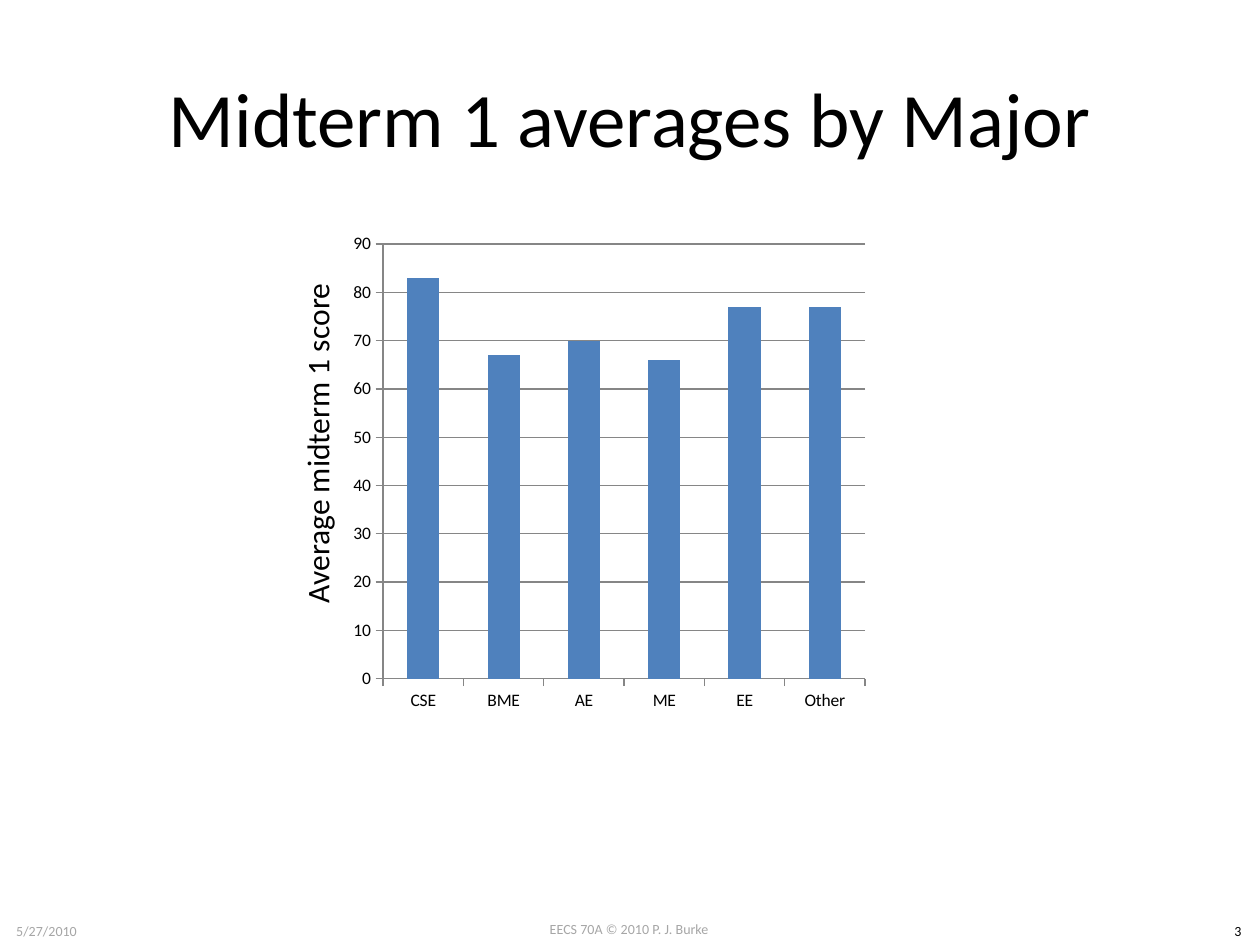
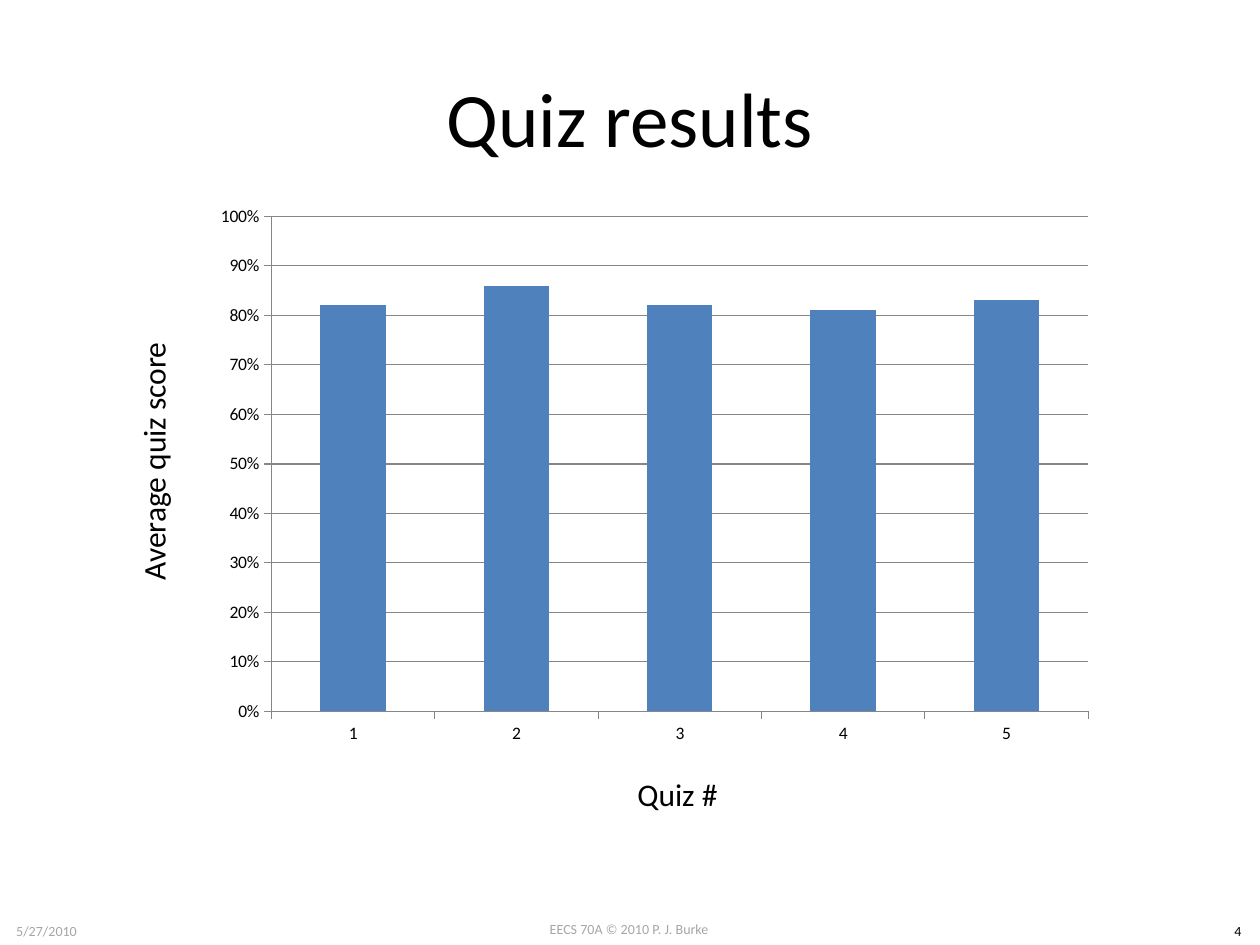
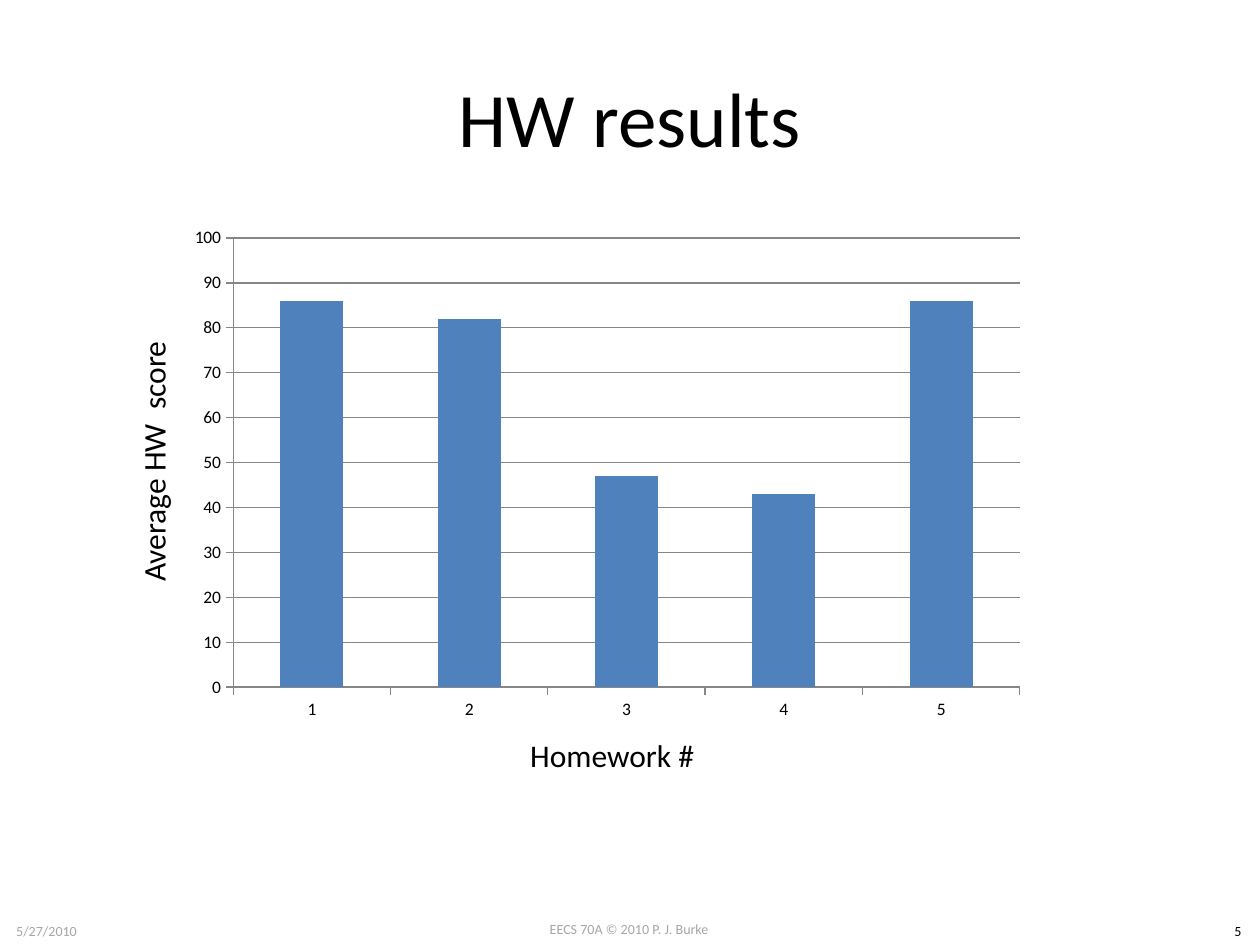
from pptx import Presentation
from pptx.chart.data import CategoryChartData
from pptx.dml.color import RGBColor
from pptx.enum.chart import XL_CHART_TYPE, XL_TICK_MARK
from pptx.enum.text import MSO_ANCHOR, MSO_AUTO_SIZE, PP_ALIGN
from pptx.util import Inches, Pt

FONT = "Calibri"
BLACK = RGBColor(0x00, 0x00, 0x00)
FOOTER_GRAY = RGBColor(0xA6, 0xA6, 0xA6)
AXIS_GRAY = RGBColor(0x86, 0x86, 0x86)
BAR_BLUE = RGBColor(0x4F, 0x81, 0xBD)

TITLE_ONLY = 5
FIRST_NUMBER = 3
LABEL_HEIGHT = 0.4
FOOTER_HEIGHT = 0.24


def style_font(font, size, color=BLACK):
    font.name = FONT
    font.size = Pt(size)
    font.color.rgb = color


def add_title(slide, text):
    title = slide.shapes.title
    title.left, title.top = Inches(0.5), Inches(0.3)
    title.width, title.height = Inches(9), Inches(1.25)
    frame = title.text_frame
    frame.text = text
    frame.vertical_anchor = MSO_ANCHOR.MIDDLE
    paragraph = frame.paragraphs[0]
    paragraph.alignment = PP_ALIGN.CENTER
    style_font(paragraph.runs[0].font, 44)


def add_label(slide, text, left, top, width, height, size, color=BLACK,
              align=PP_ALIGN.LEFT, wrap=False):
    label = slide.shapes.add_textbox(
        Inches(left), Inches(top), Inches(width), Inches(height))
    frame = label.text_frame
    frame.text = text
    frame.word_wrap = wrap
    frame.auto_size = MSO_AUTO_SIZE.SHAPE_TO_FIT_TEXT
    paragraph = frame.paragraphs[0]
    paragraph.alignment = align
    style_font(paragraph.runs[0].font, size, color)
    return label


def add_footer(slide, number):
    for text, left, top, width, color in (
        ("EECS 70A © 2010 P. J. Burke", 3.83, 7.26, 2.33, FOOTER_GRAY),
        ("5/27/2010", 0, 7.27, 0.74, FOOTER_GRAY),
        (str(number), 9.65, 7.27, 0.35, BLACK),
    ):
        add_label(slide, text, left, top, width, FOOTER_HEIGHT, 8, color,
                  PP_ALIGN.CENTER, wrap=True)


def add_axis_label(slide, text, left, top, width, rotation=0):
    label = add_label(slide, text, left, top, width, LABEL_HEIGHT, 18)
    label.rotation = rotation


def add_score_chart(slide, position, categories, scores, top_score,
                    number_format="General"):
    """Add a column chart whose value axis has steps of ten points or percent."""
    data = CategoryChartData(number_format=number_format)
    data.categories = categories
    data.add_series("Series 1", scores)
    chart = slide.shapes.add_chart(
        XL_CHART_TYPE.COLUMN_CLUSTERED, *map(Inches, position), data).chart
    chart.has_legend = False
    chart.has_title = False
    style_font(chart.font, 10)

    columns = chart.plots[0]
    columns.gap_width = 150
    columns.vary_by_categories = False
    fill = columns.series[0].format.fill
    fill.solid()
    fill.fore_color.rgb = BAR_BLUE

    score_axis = chart.value_axis
    score_axis.minimum_scale = 0
    score_axis.maximum_scale = top_score
    score_axis.major_unit = 0.1 if top_score == 1 else 10
    score_axis.has_major_gridlines = True
    score_axis.tick_labels.number_format = number_format
    score_axis.tick_labels.number_format_is_linked = False
    for axis in (chart.category_axis, score_axis):
        axis.major_tick_mark = XL_TICK_MARK.OUTSIDE
        axis.minor_tick_mark = XL_TICK_MARK.NONE
    for line in (chart.category_axis.format.line, score_axis.format.line,
                 score_axis.major_gridlines.format.line):
        line.color.rgb = AXIS_GRAY
        line.width = Pt(0.75)


def add_midterm(slide):
    add_score_chart(slide, (2.72, 1.78, 4.23, 3.94),
                    ["CSE", "BME", "AE", "ME", "EE", "Other"],
                    [83, 67, 70, 66, 77, 77], 90)
    add_axis_label(slide, "Average midterm 1 score", 1.13, 3.3, 2.77, 270)


def add_quizzes(slide):
    add_axis_label(slide, "Average quiz score", 0.16, 3.45, 2.11, 270)
    add_axis_label(slide, "Quiz #", 4.96, 6.1, 0.85)
    add_score_chart(slide, (1.61, 1.55, 7.17, 4.44),
                    ["1", "2", "3", "4", "5"],
                    [0.82, 0.86, 0.82, 0.81, 0.83], 1, "0%")


def add_homework(slide):
    add_score_chart(slide, (1.41, 1.73, 6.82, 4.06),
                    ["1", "2", "3", "4", "5"], [86, 82, 47, 43, 86], 100)
    add_axis_label(slide, "Average HW  score", 0.15, 3.45, 2.13, 270)
    add_axis_label(slide, "Homework #", 4.11, 5.79, 1.52)


def main():
    prs = Presentation()
    prs.slide_width, prs.slide_height = Inches(10), Inches(7.5)
    results = (
        ("Midterm 1 averages by Major", add_midterm),
        ("Quiz results", add_quizzes),
        ("HW results", add_homework),
    )
    for number, (title, add_content) in enumerate(results, FIRST_NUMBER):
        slide = prs.slides.add_slide(prs.slide_layouts[TITLE_ONLY])
        add_footer(slide, number)
        add_title(slide, title)
        add_content(slide)
    prs.save("out.pptx")


if __name__ == "__main__":
    main()
